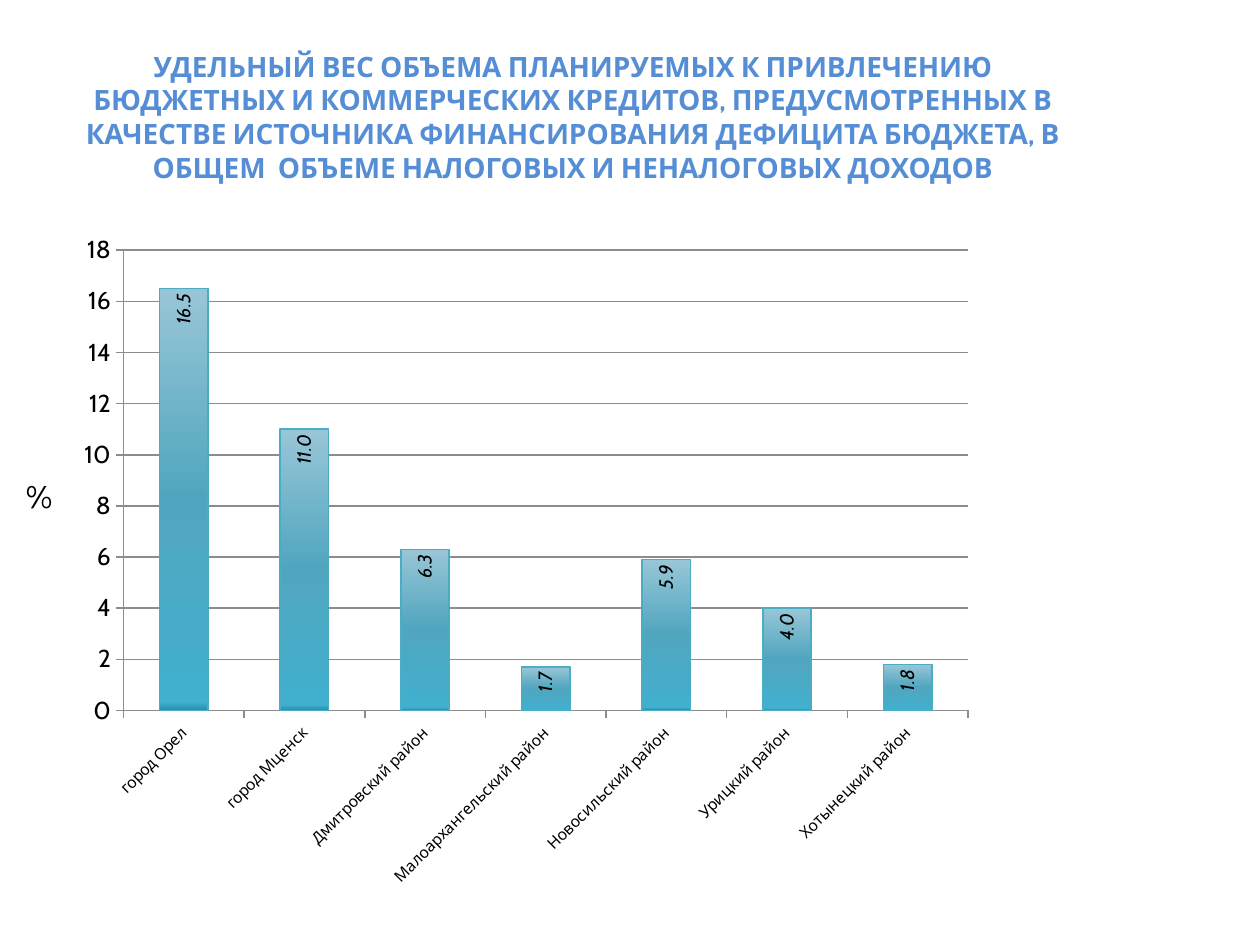
from dataclasses import dataclass

from lxml.etree import SubElement
from pptx import Presentation
from pptx.chart.data import CategoryChartData
from pptx.dml.color import RGBColor
from pptx.enum.chart import XL_CHART_TYPE as ChartType
from pptx.enum.chart import XL_LABEL_POSITION as LabelPosition
from pptx.enum.chart import XL_TICK_MARK as TickMark
from pptx.enum.text import MSO_ANCHOR as Anchor
from pptx.enum.text import PP_ALIGN as Align
from pptx.oxml.ns import qn
from pptx.util import Pt


@dataclass(frozen=True)
class Theme:
    font: str = "Cabin"
    title_color: str = "558ED5"
    text_color: str = "000000"
    axis_color: str = "8C8C8C"
    bar_line: str = "4BACC6"
    bar_stops: tuple = ((0, "98C6D7"), (49, "51A6BF"), (98, "41AFCE"),
                        (100, "2292B0"), (100, "63BBD7"))
    line_width: float = 0.9
    title_size: int = 16
    unit_size: int = 18
    value_size: int = 14
    label_size: int = 11
    category_size: int = 9


THEME = Theme()
TITLE = ("УДЕЛЬНЫЙ ВЕС ОБЪЕМА ПЛАНИРУЕМЫХ К ПРИВЛЕЧЕНИЮ БЮДЖЕТНЫХ И "
         "КОММЕРЧЕСКИХ КРЕДИТОВ, ПРЕДУСМОТРЕННЫХ В КАЧЕСТВЕ ИСТОЧНИКА "
         "ФИНАНСИРОВАНИЯ ДЕФИЦИТА БЮДЖЕТА, В ОБЩЕМ  ОБЪЕМЕ НАЛОГОВЫХ И "
         "НЕНАЛОГОВЫХ ДОХОДОВ")
SHARES = {
    "город Орел": 16.5,
    "город Мценск": 11,
    "Дмитровский район": 6.3,
    "Малоархангельский район": 1.7,
    "Новосильский район": 5.9,
    "Урицкий район": 4,
    "Хотынецкий район": 1.8,
}


def style_font(font, size, color=THEME.text_color, bold=False, italic=False):
    font.name = THEME.font
    font.size = Pt(size)
    font.bold = bold
    font.italic = italic
    font.color.rgb = RGBColor.from_string(color)


def style_line(line, color=THEME.axis_color):
    line.color.rgb = RGBColor.from_string(color)
    line.width = Pt(THEME.line_width)


def add_text(slide, text, left, top, width, height, *, anchor=Anchor.MIDDLE,
             margins=(7.2, 3.6), **font_format):
    """Add centred text; margins are (left and right, top and bottom)."""
    box = slide.shapes.add_textbox(Pt(left), Pt(top), Pt(width), Pt(height))
    frame = box.text_frame
    frame.word_wrap = True
    frame.vertical_anchor = anchor
    frame.margin_left = frame.margin_right = Pt(margins[0])
    frame.margin_top = frame.margin_bottom = Pt(margins[1])
    paragraph = frame.paragraphs[0]
    paragraph.alignment = Align.CENTER
    run = paragraph.add_run()
    run.text = text
    style_font(run.font, **font_format)


def rotate_text(element, degrees):
    body = element.find(qn("c:txPr")).find(qn("a:bodyPr"))
    body.set("rot", str(degrees * 60000))
    body.set("vert", "horz")


def place_plot(chart, **fractions):
    """Fix the inner plot area as fractions of the chart."""
    plot_area = chart._chartSpace.chart.plotArea
    for old in plot_area.findall(qn("c:layout")):
        plot_area.remove(old)
    layout = SubElement(plot_area, qn("c:layout"))
    plot_area.insert(0, layout)
    manual = SubElement(layout, qn("c:manualLayout"))
    settings = {"layoutTarget": "inner", "xMode": "edge", "yMode": "edge", **fractions}
    for name, value in settings.items():
        SubElement(manual, qn(f"c:{name}")).set("val", str(value))


def fill_gradient(series, stops):
    """Fill the bars from top to bottom with (percent, colour) stops."""
    properties = series._element.get_or_add_spPr()
    gradient = SubElement(properties, qn("a:gradFill"))
    stop_list = SubElement(gradient, qn("a:gsLst"))
    for percent, color in stops:
        stop = SubElement(stop_list, qn("a:gs"), pos=str(percent * 1000))
        SubElement(stop, qn("a:srgbClr"), val=color)
    SubElement(gradient, qn("a:lin"), ang=str(90 * 60000), scaled="0")


def style_axis(axis, size, number_format):
    axis.major_tick_mark = TickMark.OUTSIDE
    axis.minor_tick_mark = TickMark.NONE
    axis.tick_labels.number_format = number_format
    axis.tick_labels.number_format_is_linked = False
    style_font(axis.tick_labels.font, size)
    style_line(axis.format.line)


def style_labels(labels):
    labels.show_value = True
    labels.position = LabelPosition.INSIDE_END
    labels.number_format = "0.0"
    labels.number_format_is_linked = False
    style_font(labels.font, THEME.label_size, italic=True)
    rotate_text(labels._element, -90)


def add_share_chart(slide, left, top, width, height):
    data = CategoryChartData(number_format="0.0")
    data.categories = list(SHARES)
    data.add_series("Series 1", list(SHARES.values()))
    chart = slide.shapes.add_chart(ChartType.COLUMN_STACKED, Pt(left), Pt(top),
                                   Pt(width), Pt(height), data).chart
    chart.has_legend = False
    chart.has_title = False
    style_font(chart.font, THEME.unit_size)
    place_plot(chart, x=0.09, y=0.02, w=0.9, h=0.66)
    place_plot(chart, x=0.094, y=0.023, w=0.901, h=0.663)

    style_axis(chart.category_axis, THEME.category_size, "General")
    rotate_text(chart.category_axis._element, -45)
    values = chart.value_axis
    style_axis(values, THEME.value_size, "#,##0")
    values.minimum_scale, values.maximum_scale, values.major_unit = 0, 18, 2
    values.has_major_gridlines = True
    style_line(values.major_gridlines.format.line)

    plot = chart.plots[0]
    plot.vary_by_categories = False
    plot.gap_width = 150
    plot.overlap = 100
    series = plot.series[0]
    fill_gradient(series, THEME.bar_stops)
    style_line(series.format.line, THEME.bar_line)
    style_labels(series.data_labels)


def main():
    presentation = Presentation()
    presentation.slide_width, presentation.slide_height = Pt(720), Pt(540)
    slide = presentation.slides.add_slide(presentation.slide_layouts[6])
    add_text(slide, TITLE, 42.5, 15, 570, 90, anchor=Anchor.BOTTOM, margins=(3.6, 0),
             size=THEME.title_size, color=THEME.title_color, bold=True)
    add_text(slide, "%", -8.6, 264.2, 62, 38, size=THEME.unit_size)
    add_share_chart(slide, 20.2, 133.9, 535.7, 396.7)
    presentation.save("out.pptx")


if __name__ == "__main__":
    main()
